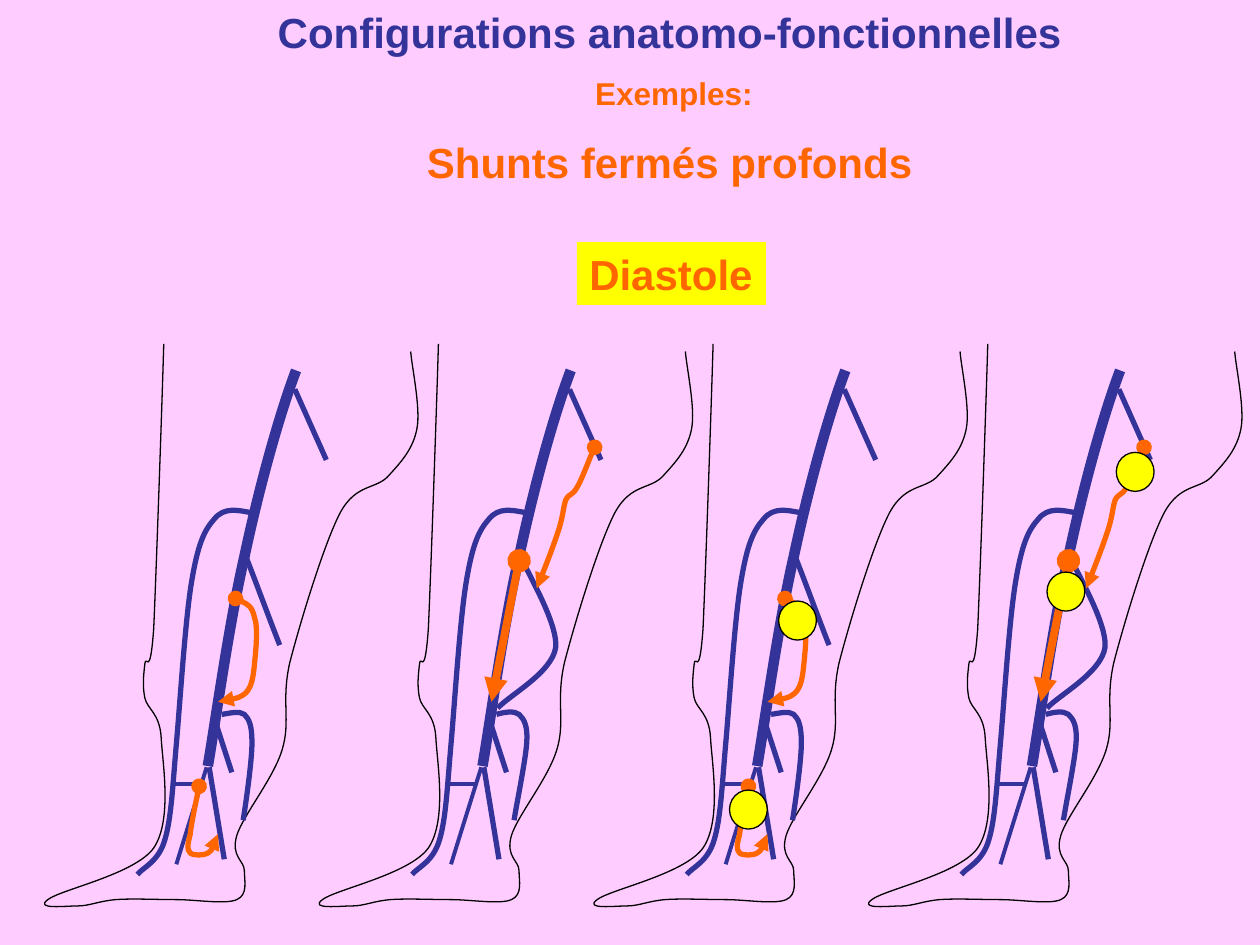
from lxml import etree
from pptx import Presentation
from pptx import util as u
from pptx.dml.color import RGBColor
from pptx.enum import shapes, text
from pptx.oxml import ns

COLORS = {"background": "FFCCFF", "vein": "333399", "flow": "FF6600",
          "skin": "000000", "highlight": "FFFF00"}
UNIT = u.Cm(0.0254)
LEG_LEFT, LEG_TOP, LEG_STEP = 27, 273, 218

SKIN = [
    (103, 0), (102, 37), (97, 183), (95, 226), (92, 268), (89, 245), (88, 254),
    (87, 263), (86, 271), (88, 281), (90, 290), (100, 293), (101, 313),
    (102, 332), (110, 378), (95, 400), (80, 421), (21, 433), (11, 441),
    (0, 449), (25, 446), (35, 446), (44, 446), (52, 442), (65, 441),
    (78, 440), (97, 441), (113, 441), (129, 441), (152, 445), (161, 441),
    (170, 437), (167, 426), (167, 418), (167, 410), (156, 407), (161, 390),
    (166, 374), (190, 345), (197, 322), (204, 299), (196, 284), (203, 253),
    (211, 222), (230, 159), (243, 134), (256, 110), (272, 116), (282, 104),
    (292, 93), (301, 83), (304, 67), (307, 51), (300, 19), (299, 6)]
DEEP_VEIN = [(208, 21), (194, 58), (178, 117), (167, 169),
             (155, 221), (144, 300), (138, 335)]
GREAT_SAPHENOUS = [
    (173, 134), (162, 132), (151, 129), (143, 139), (135, 148), (130, 159),
    (125, 189), (120, 219), (116, 283), (113, 317), (110, 351), (109, 376),
    (104, 393), (99, 411), (87, 415), (82, 421)]
FRONT_TIBIAL = [(137, 336), (127, 368), (117, 400), (113, 413)]
BACK_TIBIAL = [(139, 336), (144, 366), (149, 397), (151, 409)]
COMMON_VEINS = [(DEEP_VEIN, 6), (GREAT_SAPHENOUS, 3),
                (FRONT_TIBIAL, 2.25), (BACK_TIBIAL, 3)]
BRANCHES = [((145, 303), (157, 340), 3), ((109, 349), (133, 349), 2.25),
            ((207, 36), (232, 92), 3)]

OPEN_LOOP = {
    "veins": [
        [(149, 294), (156, 293), (163, 291), (167, 294), (171, 298),
         (173, 303), (173, 317), (173, 331), (168, 366), (166, 378)],
        [(167, 166), (172, 178), (189, 224), (195, 239)]],
    "flows": [
        ([(160, 202), (167, 205), (173, 208), (175, 217), (178, 225),
          (176, 244), (175, 254), (174, 264), (173, 272), (168, 277),
          (163, 281), (154, 283), (146, 284)], 3),
        ([(131, 351), (128, 366), (125, 380), (124, 389), (122, 397),
          (121, 401), (124, 404), (126, 406), (135, 406), (138, 404),
          (142, 401), (144, 395), (146, 389)], 3)],
    "blocks": [(155, 204), (116, 354)]}
CLOSED_LOOP = {
    "veins": [
        [(149, 294), (156, 292), (163, 291), (167, 294), (171, 298),
         (174, 303), (173, 317), (172, 331), (165, 365), (163, 378)],
        [(167, 166), (172, 179), (198, 221), (196, 241),
         (193, 261), (159, 279), (150, 289)]],
    "flows": [
        ([(227, 82), (224, 88), (217, 107), (213, 114), (209, 121),
          (207, 118), (204, 124), (202, 130), (202, 137), (198, 149),
          (194, 161), (184, 187), (181, 194)], 3),
        ([(167, 172), (167, 172), (156, 228), (145, 284)], 4.5)],
    "blocks": [(205, 86), (150, 181)]}


def rgb(name):
    """Return the named palette colour."""
    return RGBColor.from_string(COLORS[name])


def set_line(outline, color, width):
    """Give a line its colour and width in points."""
    outline.color.rgb = rgb(color)
    outline.width = u.Pt(width)


def add_curve(slide, left, top, points, color, width, flow=False):
    """Draw a chain of cubic curves, as an arrow from a dot when it is a flow."""
    builder = slide.shapes.build_freeform(*points[0], scale=UNIT)
    builder.add_line_segments(points[1:], close=False)
    curve = builder.convert_to_shape(left, top)
    curve.shadow.inherit = False
    curve.fill.background()
    set_line(curve.line, color, width)
    segments = curve.element.xpath(".//a:lnTo")
    for start in range(0, len(segments), 3):
        group = segments[start:start + 3]
        bezier = etree.Element(ns.qn("a:cubicBezTo"))
        group[0].addprevious(bezier)
        for segment in group:
            bezier.append(segment[0])
            segment.getparent().remove(segment)
    if flow:
        ln = curve.element.xpath(".//a:ln")[0]
        etree.SubElement(ln, ns.qn("a:headEnd"), type="oval")
        etree.SubElement(ln, ns.qn("a:tailEnd"), type="triangle")


def add_branch(slide, left, top, start, end, width):
    """Draw a straight vein between two points of a leg."""
    branch = slide.shapes.add_connector(
        shapes.MSO_CONNECTOR.STRAIGHT,
        left + start[0] * UNIT, top + start[1] * UNIT,
        left + end[0] * UNIT, top + end[1] * UNIT)
    set_line(branch.line, "vein", width)
    etree.SubElement(branch.element.spPr, ns.qn("a:effectLst"))


def add_highlight(slide, kind, left, top, width, height):
    """Add a yellow shape without a line."""
    patch = slide.shapes.add_shape(kind, left, top, width, height)
    patch.shadow.inherit = False
    patch.fill.solid()
    patch.fill.fore_color.rgb = rgb("highlight")
    patch.line.fill.background()
    return patch


def add_leg(slide, left, top, network, blocked):
    """Draw one leg with its veins, its flows and any blocks on them."""
    add_curve(slide, left, top, SKIN, "skin", 0.75)
    for points, width in COMMON_VEINS + [(vein, 3) for vein in network["veins"]]:
        add_curve(slide, left, top, points, "vein", width)
    for start, end, width in BRANCHES:
        add_branch(slide, left, top, start, end, width)
    for points, width in network["flows"]:
        add_curve(slide, left, top, points, "flow", width, flow=True)
    for x, y in network["blocks"] if blocked else []:
        block = add_highlight(slide, shapes.MSO_SHAPE.OVAL, left + x * UNIT,
                              top + y * UNIT, 30 * UNIT, 31 * UNIT)
        set_line(block.line, "skin", 0.75)


def write_text(paragraph, words, size=24, color="flow", before=0,
               align=text.PP_ALIGN.CENTER):
    """Write bold words into a paragraph."""
    paragraph.alignment = align
    paragraph.space_before = u.Pt(before)
    run = paragraph.add_run()
    run.text = words
    run.font.name = "Arial"
    run.font.bold = True
    run.font.size = u.Pt(size)
    run.font.color.rgb = rgb(color)


def add_heading(slide, left, top, width, height):
    """Place the three heading lines in the title placeholder."""
    heading = slide.shapes.title
    heading.left, heading.top, heading.width, heading.height = left, top, width, height
    frame = heading.text_frame
    frame.auto_size = text.MSO_AUTO_SIZE.NONE
    frame.vertical_anchor = text.MSO_ANCHOR.TOP
    write_text(frame.paragraphs[0], "Configurations anatomo-fonctionnelles", color="vein")
    write_text(frame.add_paragraph(), " Exemples:", size=18, before=10)
    write_text(frame.add_paragraph(), "Shunts fermés profonds", before=14)


def add_phase(slide, left, top, width, height):
    """Place the label of the heart phase."""
    phase = add_highlight(slide, shapes.MSO_SHAPE.RECTANGLE, left, top, width, height)
    phase.text_frame.word_wrap = False
    phase.text_frame.vertical_anchor = text.MSO_ANCHOR.TOP
    write_text(phase.text_frame.paragraphs[0], "Diastole", align=text.PP_ALIGN.LEFT)


def main():
    """Build the slide and save it."""
    deck = Presentation()
    deck.slide_width, deck.slide_height = u.Cm(25.4), u.Cm(19.05)
    slide = deck.slides.add_slide(deck.slide_layouts.get_by_name("Title Only"))
    slide.background.fill.solid()
    slide.background.fill.fore_color.rgb = rgb("background")
    for index in range(4):
        network = CLOSED_LOOP if index % 2 else OPEN_LOOP
        add_leg(slide, (LEG_LEFT + index * LEG_STEP) * UNIT, LEG_TOP * UNIT,
                network, blocked=index >= 2)
    add_heading(slide, u.Cm(4.7), u.Cm(0), u.Cm(17.6), u.Cm(5.08))
    add_phase(slide, u.Cm(11.63), u.Cm(4.88), u.Cm(3.81), u.Cm(1.27))
    deck.save("out.pptx")


if __name__ == "__main__":
    main()
